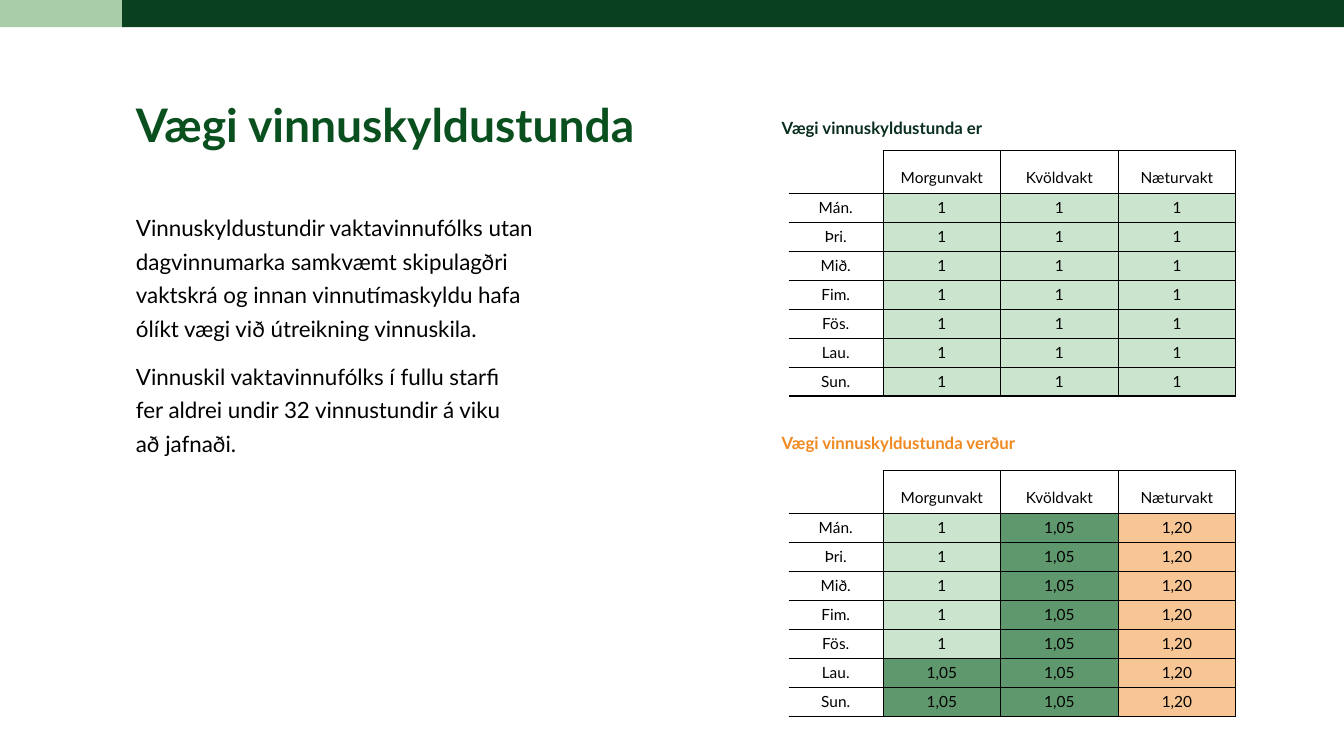
from lxml import etree
from pptx import Presentation
from pptx.dml.color import RGBColor
from pptx.enum.shapes import MSO_SHAPE
from pptx.enum.text import MSO_ANCHOR, PP_ALIGN
from pptx.oxml.ns import qn
from pptx.util import Pt

PX = 9525
RECTANGLE = MSO_SHAPE.RECTANGLE
LEFT, CENTER = PP_ALIGN.LEFT, PP_ALIGN.CENTER
MIDDLE, BOTTOM = MSO_ANCHOR.MIDDLE, MSO_ANCHOR.BOTTOM

FONT = "Lato"
BLACK = RGBColor(0x00, 0x00, 0x00)
WHITE = RGBColor(0xFF, 0xFF, 0xFF)
BAR_GREEN = RGBColor(0x09, 0x41, 0x1E)
BAR_LIGHT = RGBColor(0xA9, 0xCC, 0xA9)
TITLE_GREEN = RGBColor(0x09, 0x50, 0x1E)
CAPTION_GREEN = RGBColor(0x09, 0x2E, 0x1E)
CAPTION_ORANGE = RGBColor(0xF1, 0x89, 0x21)
WEIGHT_COLORS = {
    "1": RGBColor(0xCB, 0xE4, 0xCE),
    "1,05": RGBColor(0x60, 0x98, 0x6E),
    "1,20": RGBColor(0xF8, 0xC6, 0x94),
}

TITLE = "Vægi vinnuskyldustunda"
BODY = [
    "Vinnuskyldustundir vaktavinnufólks utan dagvinnumarka samkvæmt skipulagðri "
    "vaktskrá og innan vinnutímaskyldu hafa ólíkt vægi við útreikning vinnuskila.",
    "Vinnuskil vaktavinnufólks í fullu starfi\n"
    "fer aldrei undir 32 vinnustundir á viku\nað jafnaði.",
]
SHIFTS = ["Morgunvakt", "Kvöldvakt", "Næturvakt"]
DAYS = ["Mán.", "Þri.", "Mið.", "Fim.", "Fös.", "Lau.", "Sun."]
CURRENT_WEIGHTS = [["1", "1", "1"]] * 7
NEW_WEIGHTS = [["1", "1,05", "1,20"]] * 5 + [["1,05", "1,05", "1,20"]] * 2

DAY_WIDTH, SHIFT_WIDTH = 90, 112
HEADER_HEIGHT, DAY_HEIGHT = 38, 27


def px(*lengths):
    return [length * PX for length in lengths]


def write(frame, paragraphs, size, color=BLACK, bold=False, align=LEFT,
          line_spacing=None, space_before=0):
    """Fill a text frame; a newline inside a paragraph is a line break."""
    frame.word_wrap = True
    for index, text in enumerate(paragraphs):
        paragraph = frame.add_paragraph() if index else frame.paragraphs[0]
        paragraph.alignment = align
        paragraph.line_spacing = line_spacing
        paragraph.space_before = Pt(space_before if index else 0)
        for line_index, line in enumerate(text.split("\n")):
            if line_index:
                paragraph.add_line_break()
            run = paragraph.add_run()
            run.text = line
            run.font.name = FONT
            run.font.size = Pt(size)
            run.font.bold = bold
            run.font.color.rgb = color


def add_text(slide, box, paragraphs, **text_format):
    write(slide.shapes.add_textbox(*px(*box)).text_frame, paragraphs, **text_format)


def add_top_bar(slide, left, top, width, height):
    accent = 116
    for x, part_width, color in ((left + accent, width - accent, BAR_GREEN),
                                 (left, accent, BAR_LIGHT)):
        bar = slide.shapes.add_shape(RECTANGLE, *px(x, top, part_width, height))
        bar.shadow.inherit = False
        bar.fill.solid()
        bar.fill.fore_color.rgb = color
        bar.line.fill.background()


def set_borders(cell, widths):
    """Set left, right, top and bottom borders in points; 0 hides one."""
    properties = cell._tc.get_or_add_tcPr()
    for side, width in zip("LRTB", widths):
        line = etree.SubElement(properties, qn(f"a:ln{side}"), w=str(Pt(width)))
        if width:
            fill = etree.SubElement(line, qn("a:solidFill"))
            etree.SubElement(fill, qn("a:srgbClr"), val=str(BLACK))
        else:
            etree.SubElement(line, qn("a:noFill"))


def add_weight_table(slide, left, top, weights):
    rows = [["", *SHIFTS]] + [[day, *row] for day, row in zip(DAYS, weights)]
    widths = [DAY_WIDTH] + [SHIFT_WIDTH] * len(SHIFTS)
    heights = [HEADER_HEIGHT] + [DAY_HEIGHT] * len(DAYS)
    table = slide.shapes.add_table(
        len(rows), len(widths), *px(left, top, sum(widths), sum(heights))).table
    for column, width in zip(table.columns, px(*widths)):
        column.width = width
    for row, height in zip(table.rows, px(*heights)):
        row.height = height
    for row_index, row in enumerate(rows):
        is_header = row_index == 0
        inset = (6 if is_header else 5) * PX
        for column_index, text in enumerate(row):
            cell = table.cell(row_index, column_index)
            is_label = column_index == 0
            cell.margin_left = cell.margin_right = inset
            cell.margin_top = cell.margin_bottom = inset
            cell.vertical_anchor = BOTTOM if is_header else MIDDLE
            set_borders(cell, (0 if is_label else 0.5, 0.5,
                               0 if is_header and is_label else 0.5,
                               1 if row_index == len(DAYS) else 0.5))
            cell.fill.solid()
            cell.fill.fore_color.rgb = WEIGHT_COLORS.get(text, WHITE)
            write(cell.text_frame, [text], size=11, align=CENTER,
                  line_spacing=Pt(10) if is_header else None)


def add_weight_section(slide, left, top, width, caption, color, weights, table_offset):
    add_text(slide, (left, top, width, 29), [caption], size=12, color=color, bold=True)
    add_weight_table(slide, left + 16, top + table_offset, weights)


def add_explanation(slide, left, top, width, height):
    add_text(slide, (left, top, width, 83), [TITLE], size=33, color=TITLE_GREEN,
             bold=True, line_spacing=0.9)
    add_text(slide, (left, top + 100, 422, height - 100), BODY, size=16,
             line_spacing=Pt(24), space_before=10)


def main():
    presentation = Presentation()
    presentation.slide_width, presentation.slide_height = px(1280, 720)
    slide = presentation.slides.add_slide(presentation.slide_layouts[6])
    add_top_bar(slide, 0, 0, 1280, 26)
    add_explanation(slide, 120, 93, 573, 582)
    add_weight_section(slide, 735, 107, 268, "Vægi vinnuskyldustunda er",
                       CAPTION_GREEN, CURRENT_WEIGHTS, table_offset=36)
    add_weight_section(slide, 735, 407, 309, "Vægi vinnuskyldustunda verður",
                       CAPTION_ORANGE, NEW_WEIGHTS, table_offset=41)
    presentation.save("out.pptx")


if __name__ == "__main__":
    main()
